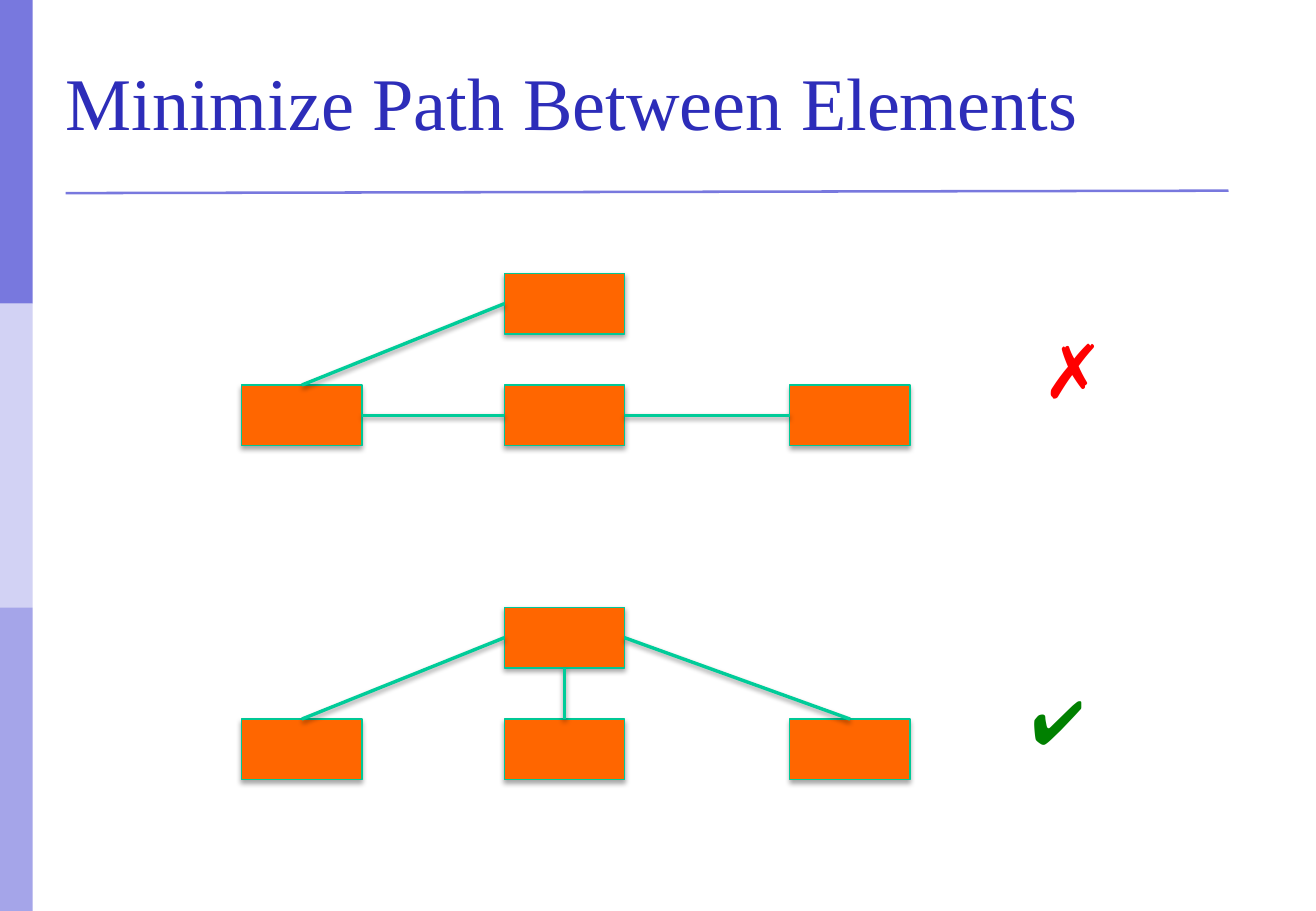
import lxml.etree
import pptx
import pptx.dml.color
import pptx.enum.shapes
import pptx.enum.text
import pptx.oxml.ns
import pptx.util

RGBColor = pptx.dml.color.RGBColor
Inches = pptx.util.Inches
Pt = pptx.util.Pt
qn = pptx.oxml.ns.qn
RECTANGLE = pptx.enum.shapes.MSO_SHAPE.RECTANGLE
STRAIGHT = pptx.enum.shapes.MSO_CONNECTOR.STRAIGHT
ANCHOR = pptx.enum.text.MSO_ANCHOR

VIOLET = RGBColor(0x78, 0x78, 0xDE)
PALE_VIOLET = RGBColor(0xD2, 0xD2, 0xF4)
MID_VIOLET = RGBColor(0xA5, 0xA5, 0xE9)
TITLE_BLUE = RGBColor(0x2D, 0x2D, 0xB9)
ORANGE = RGBColor(0xFF, 0x66, 0x00)
BOX_EDGE = RGBColor(0x00, 0xC8, 0x96)
LINK_GREEN = RGBColor(0x00, 0xCC, 0x99)
CHECK_GREEN = RGBColor(0x00, 0x80, 0x00)
CROSS_RED = RGBColor(0xFF, 0x00, 0x00)

deck = pptx.Presentation()
deck.slide_width = Inches(10.83)
deck.slide_height = Inches(7.5)
page = deck.slides.add_slide(deck.slide_layouts[6])


def set_shadow(shape, alpha, distance):
    """Give a shape or connector a soft shadow straight below it."""
    properties = shape._element.spPr
    effects = properties.find(qn("a:effectLst"))
    if effects is None:
        effects = lxml.etree.SubElement(properties, qn("a:effectLst"))
    if alpha:
        shadow = lxml.etree.SubElement(
            effects, qn("a:outerShdw"), blurRad=str(Pt(3.1)),
            dist=str(Pt(distance)), dir="5400000", rotWithShape="0")
        color = lxml.etree.SubElement(shadow, qn("a:srgbClr"), val="000000")
        lxml.etree.SubElement(color, qn("a:alpha"), val=str(alpha * 1000))


def add_text(shapes, place, text, font, size, color, spacing):
    """Add a one-line text box and return its text frame."""
    box = shapes.add_textbox(*[Inches(length) for length in place])
    para = box.text_frame.paragraphs[0]
    para.line_spacing = spacing
    span = para.add_run()
    span.text = text
    span.font.name = font
    span.font.size = Pt(size)
    span.font.color.rgb = color
    return box.text_frame


# Side band in three equal parts
band_height = deck.slide_height // 3
for row, color in enumerate([VIOLET, PALE_VIOLET, MID_VIOLET]):
    band = page.shapes.add_shape(
        RECTANGLE, 0, row * band_height, Inches(0.27), band_height)
    band.shadow.inherit = False
    band.fill.solid()
    band.fill.fore_color.rgb = color
    band.line.fill.background()

# Title and the rule below it
rule = page.shapes.add_connector(
    STRAIGHT, Inches(0.54), Inches(1.59), Inches(10.11), Inches(1.57))
rule.line.color.rgb = VIOLET
rule.line.width = Pt(1.5)
set_shadow(rule, 0, 0)

title = add_text(page.shapes, (0.54, 0.27, 9.74, 1.27),
                 "Minimize Path Between Elements",
                 "Times New Roman", 44, TITLE_BLUE, 0.78)
title.word_wrap = True
title.vertical_anchor = ANCHOR.MIDDLE
title.margin_left = title.margin_right = 0
title.margin_top = title.margin_bottom = 0

# Box grid shared by both diagrams: name -> (left, row)
BOX_WIDTH, BOX_HEIGHT, ROW_STEP = 0.99, 0.5, 0.92
BOXES = {"top": (4.15, 0), "left": (1.99, 1),
         "middle": (4.15, 1), "right": (6.5, 1)}
TOP, LEFT, BOTTOM, RIGHT = range(4)

# Each diagram: top edge, links between box sides, verdict mark
DIAGRAMS = [
    (2.25,
     [("left", TOP, "top", LEFT),
      ("left", RIGHT, "middle", LEFT),
      ("middle", RIGHT, "right", LEFT)],
     ((8.48, 2.83, 0.55, 0.64), "✗", "Arial", 44, CROSS_RED, 0.68)),
    (5,
     [("left", TOP, "top", LEFT),
      ("middle", TOP, "top", BOTTOM),
      ("right", TOP, "top", RIGHT)],
     ((8.39, 5.75, 0.63, 0.55), "✔", "Arial", 36, CHECK_GREEN, 0.68)),
]

for diagram_top, links, mark in DIAGRAMS:
    diagram = page.shapes.add_group_shape()

    # Boxes
    boxes = {}
    for name, (left, row) in BOXES.items():
        box = diagram.shapes.add_shape(
            RECTANGLE, Inches(left), Inches(diagram_top + row * ROW_STEP),
            Inches(BOX_WIDTH), Inches(BOX_HEIGHT))
        box.shadow.inherit = False
        box.fill.solid()
        box.fill.fore_color.rgb = ORANGE
        box.line.color.rgb = BOX_EDGE
        box.line.width = Pt(0.75)
        set_shadow(box, 35, 1.8)
        boxes[name] = box

    # Links
    for start, start_side, end, end_side in links:
        link = diagram.shapes.add_connector(STRAIGHT, 0, 0, 0, 0)
        link.begin_connect(boxes[start], start_side)
        link.end_connect(boxes[end], end_side)
        link.line.color.rgb = LINK_GREEN
        link.line.width = Pt(2)
        set_shadow(link, 38, 1.6)

    # Verdict mark
    verdict = add_text(diagram.shapes, *mark)
    verdict.word_wrap = False

deck.save("out.pptx")
